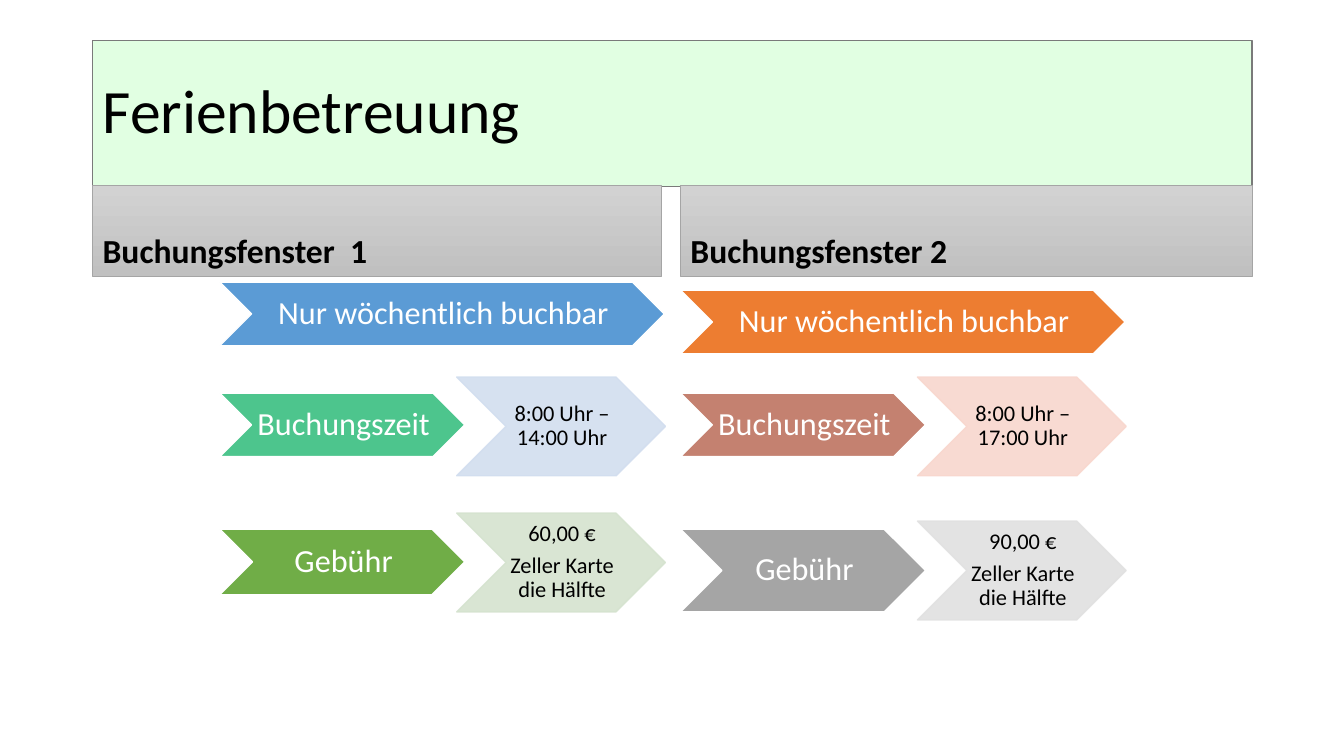
from pptx import Presentation
from pptx.dml.color import RGBColor
from pptx.enum.shapes import MSO_SHAPE
from pptx.enum.text import MSO_ANCHOR, PP_ALIGN
from pptx.oxml.ns import qn
from pptx.util import Pt
from lxml import etree

PX = 9144  # 100 px to the inch
RECTANGLE, CHEVRON = MSO_SHAPE.RECTANGLE, MSO_SHAPE.CHEVRON
LEFT, CENTER = PP_ALIGN.LEFT, PP_ALIGN.CENTER
MIDDLE, BOTTOM = MSO_ANCHOR.MIDDLE, MSO_ANCHOR.BOTTOM

BLACK = RGBColor(0x00, 0x00, 0x00)
WHITE = RGBColor(0xFF, 0xFF, 0xFF)
MINT = RGBColor(0xE1, 0xFF, 0xE2)
TITLE_LINE = RGBColor(0x7A, 0x7A, 0x7A)
HEADING_TOP = RGBColor(0xD2, 0xD2, 0xD2)
HEADING_BOTTOM = RGBColor(0xC0, 0xC0, 0xC0)
GRAY = RGBColor(0xA5, 0xA5, 0xA5)
BLUE = RGBColor(0x5B, 0x9B, 0xD5)
TEAL = RGBColor(0x4D, 0xC5, 0x8D)
GREEN = RGBColor(0x70, 0xAD, 0x47)
PALE_BLUE = RGBColor(0xD2, 0xDE, 0xEF)
PALE_GREEN = RGBColor(0xD5, 0xE3, 0xCF)
ORANGE = RGBColor(0xED, 0x7D, 0x31)
BRICK = RGBColor(0xC4, 0x81, 0x70)
PALE_ORANGE = RGBColor(0xF8, 0xD7, 0xCE)
PALE_GRAY = RGBColor(0xE1, 0xE1, 0xE1)

deck = Presentation()
deck.slide_width, deck.slide_height = 1333 * PX, 750 * PX
page = deck.slides.add_slide(deck.slide_layouts[6])


def add_box(text, kind, place, fill, line, line_width=1, size=23, color=WHITE,
            bold=False, align=CENTER, anchor=MIDDLE, insets=(3, 2, 0, 2)):
    """Add a filled shape; each line of text becomes a paragraph."""
    box = page.shapes.add_shape(kind, *(length * PX for length in place))
    box.shadow.inherit = False
    if isinstance(fill, list):
        box.fill.gradient()
        box.fill.gradient_angle = 270
        for stop, shade in zip(box.fill.gradient_stops, fill):
            stop.color.rgb = shade
    else:
        box.fill.solid()
        box.fill.fore_color.rgb = fill
    box.line.color.rgb = line
    box.line.width = Pt(line_width)

    frame = box.text_frame
    frame.word_wrap = True
    frame.vertical_anchor = anchor
    (frame.margin_left, frame.margin_top,
     frame.margin_right, frame.margin_bottom) = (inset * PX for inset in insets)
    for index, words in enumerate(text.split("\n")):
        para = frame.add_paragraph() if index else frame.paragraphs[0]
        para.alignment = align
        para.line_spacing = 0.9
        para.space_before = Pt(5.6 if index else 0)
        span = para.add_run()
        span.text = words
        span.font.name = "Calibri"
        span.font.size = Pt(size)
        span.font.bold = bold
        span.font.color.rgb = color
    return box


# Title band
banner = {"color": BLACK, "align": LEFT, "insets": (10, 5, 10, 5)}
add_box("Ferienbetreuung", RECTANGLE, (92, 40, 1150, 145), MINT, TITLE_LINE,
        size=44, **banner)

# Each window: heading, left, width, chevron left, and its chevrons:
# text, top, height, colour for labels; text, top, colour for details
windows = [
    ("Buchungsfenster  1", 92, 564, 218,
     ("Nur wöchentlich buchbar", 280, BLUE),
     [("Buchungszeit", 390, 63, TEAL), ("Gebühr", 525, 65, GREEN)],
     [("8:00 Uhr – 14:00 Uhr", 374, PALE_BLUE),
      ("60,00 €\nZeller Karte die Hälfte", 509, PALE_GREEN)]),
    ("Buchungsfenster 2", 675, 567, 675,
     ("Nur wöchentlich buchbar", 288, ORANGE),
     [("Buchungszeit", 390, 63, BRICK), ("Gebühr", 525, 82, GRAY)],
     [("8:00 Uhr – 17:00 Uhr", 374, PALE_ORANGE),
      ("90,00 €\nZeller Karte die Hälfte", 517, PALE_GRAY)]),
]

for heading, left, width, start, rule, labels, details in windows:
    add_box(heading, RECTANGLE, (left, 184, width, 90),
            [HEADING_TOP, HEADING_BOTTOM], GRAY, line_width=0.5, size=24,
            bold=True, anchor=BOTTOM, **banner)

    # Booking rule across the window
    text, top, fill = rule
    add_box(text, CHEVRON, (start, top, 441, 63), fill, WHITE)

    # Labels
    for text, top, height, fill in labels:
        add_box(text, CHEVRON, (start, top, 243, height), fill, WHITE)

    # Details, slightly transparent
    for text, top, fill in details:
        detail = add_box(text, CHEVRON, (start + 235, top, 207, 98), fill, fill,
                         size=16, color=BLACK, insets=(2, 1, 0, 1))
        for tint in detail.element.spPr.iter(qn("a:srgbClr")):
            etree.SubElement(tint, qn("a:alpha"), val="90000")

deck.save("out.pptx")
